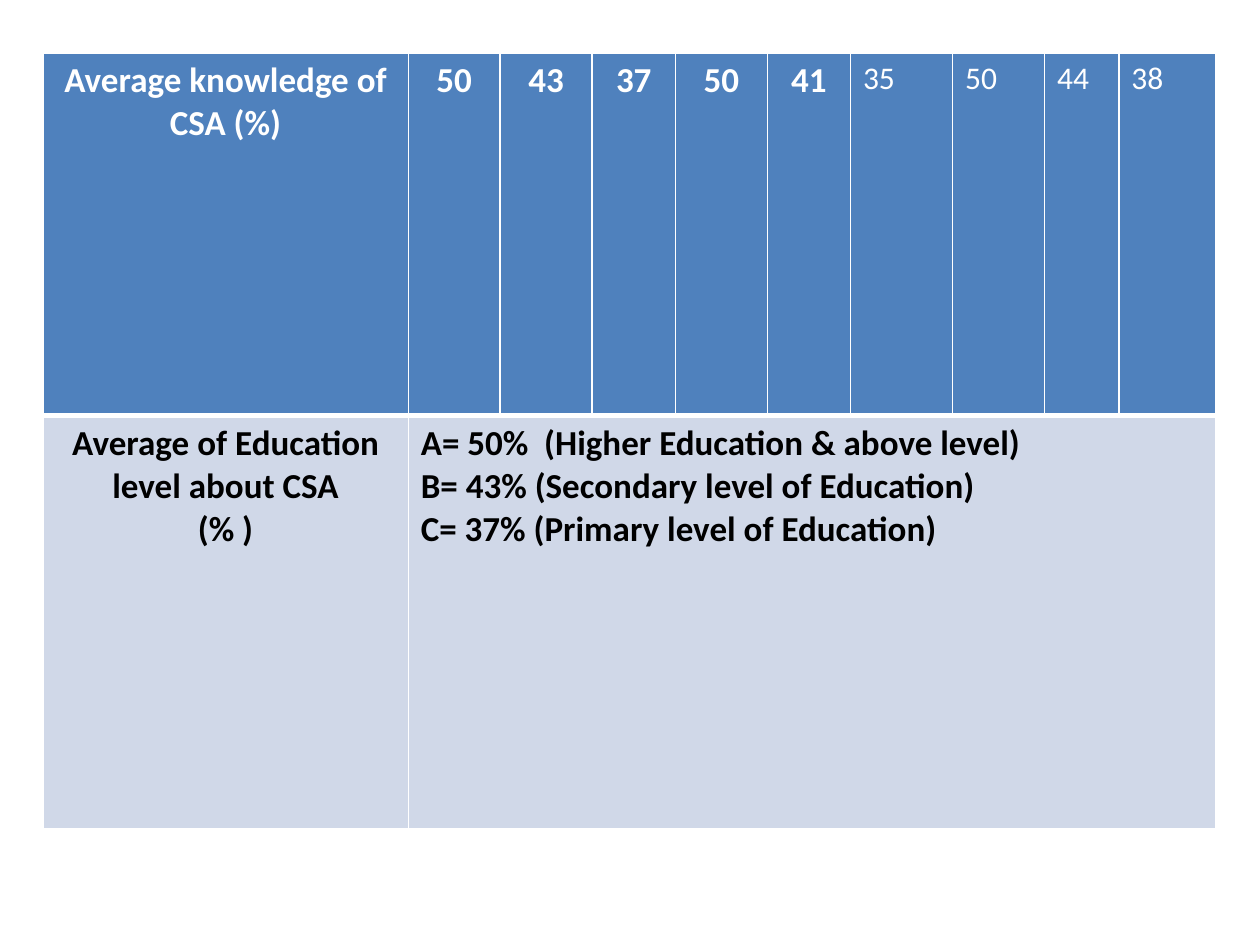
import pptx
import pptx.util
import pptx.dml.color
import pptx.enum.text
import pptx.oxml
import pptx.oxml.ns
from dataclasses import dataclass
from pptx.util import Inches


@dataclass(frozen=True)
class Theme:
    font: str = "Calibri"
    header_fill: str = "4F81BD"
    body_fill: str = "D0D8E8"
    header_text: str = "FFFFFF"
    body_text: str = "000000"
    border: str = "FFFFFF"
    large: int = 20
    small: int = 18


theme = Theme()
CENTER = pptx.enum.text.PP_ALIGN.CENTER
LEFT = pptx.enum.text.PP_ALIGN.LEFT


def set_borders(cell, bottom_width):
    """Draw the four cell borders, placed before the fill as the schema asks."""
    properties = cell._tc.get_or_add_tcPr()
    widths = {"lnL": 1, "lnR": 1, "lnT": 1, "lnB": bottom_width}
    for position, (side, width) in enumerate(widths.items()):
        line = pptx.oxml.parse_xml(
            f'<a:{side} {pptx.oxml.ns.nsdecls("a")} w="{pptx.util.Pt(width)}">'
            f'<a:solidFill><a:srgbClr val="{theme.border}"/></a:solidFill></a:{side}>'
        )
        properties.insert(position, line)


def write_cell(cell, lines, color, alignment=CENTER, size=theme.large, bold=True):
    cell.text = "\n".join(lines)
    for paragraph in cell.text_frame.paragraphs:
        paragraph.alignment = alignment
        paragraph.font.name = theme.font
        paragraph.font.size = pptx.util.Pt(size)
        paragraph.font.bold = bold
        paragraph.font.color.rgb = pptx.dml.color.RGBColor.from_string(color)


presentation = pptx.Presentation()
presentation.slide_width = Inches(10)
presentation.slide_height = Inches(7.5)
slide = presentation.slides.add_slide(presentation.slide_layouts[6])

# Table grid
column_widths = [2.9, 0.73, 0.73, 0.66, 0.73, 0.66, 0.81, 0.73, 0.59, 0.77]
row_heights = [2.88, 3.28]
table = slide.shapes.add_table(
    len(row_heights), len(column_widths), Inches(0.34), Inches(0.42),
    Inches(sum(column_widths)), Inches(sum(row_heights)),
).table
for column, width in zip(table.columns, column_widths):
    column.width = Inches(width)
for row, height in zip(table.rows, row_heights):
    row.height = Inches(height)

# Fills and borders
row_styles = [(theme.header_fill, 3), (theme.body_fill, 1)]
for row, (fill, bottom_width) in zip(table.rows, row_styles):
    for cell in row.cells:
        cell.fill.solid()
        cell.fill.fore_color.rgb = pptx.dml.color.RGBColor.from_string(fill)
        set_borders(cell, bottom_width)

# Knowledge row: the first five values are bold and centred, the rest plain
write_cell(table.cell(0, 0), ["Average knowledge of CSA (%)"], theme.header_text)
for index, value in enumerate([50, 43, 37, 50, 41, 35, 50, 44, 38], start=1):
    cell = table.cell(0, index)
    if index <= 5:
        write_cell(cell, [str(value)], theme.header_text)
    else:
        write_cell(cell, [str(value)], theme.header_text, LEFT, theme.small, False)

# Education row
write_cell(table.cell(1, 0), ["Average of Education level about CSA", "(% )"], theme.body_text)
education = table.cell(1, 1)
education.merge(table.cell(1, len(column_widths) - 1))
write_cell(
    education,
    [
        "A= 50%  (Higher Education & above level)",
        "B= 43% (Secondary level of Education)",
        "C= 37% (Primary level of Education)",
    ],
    theme.body_text,
    LEFT,
)

presentation.save("out.pptx")
